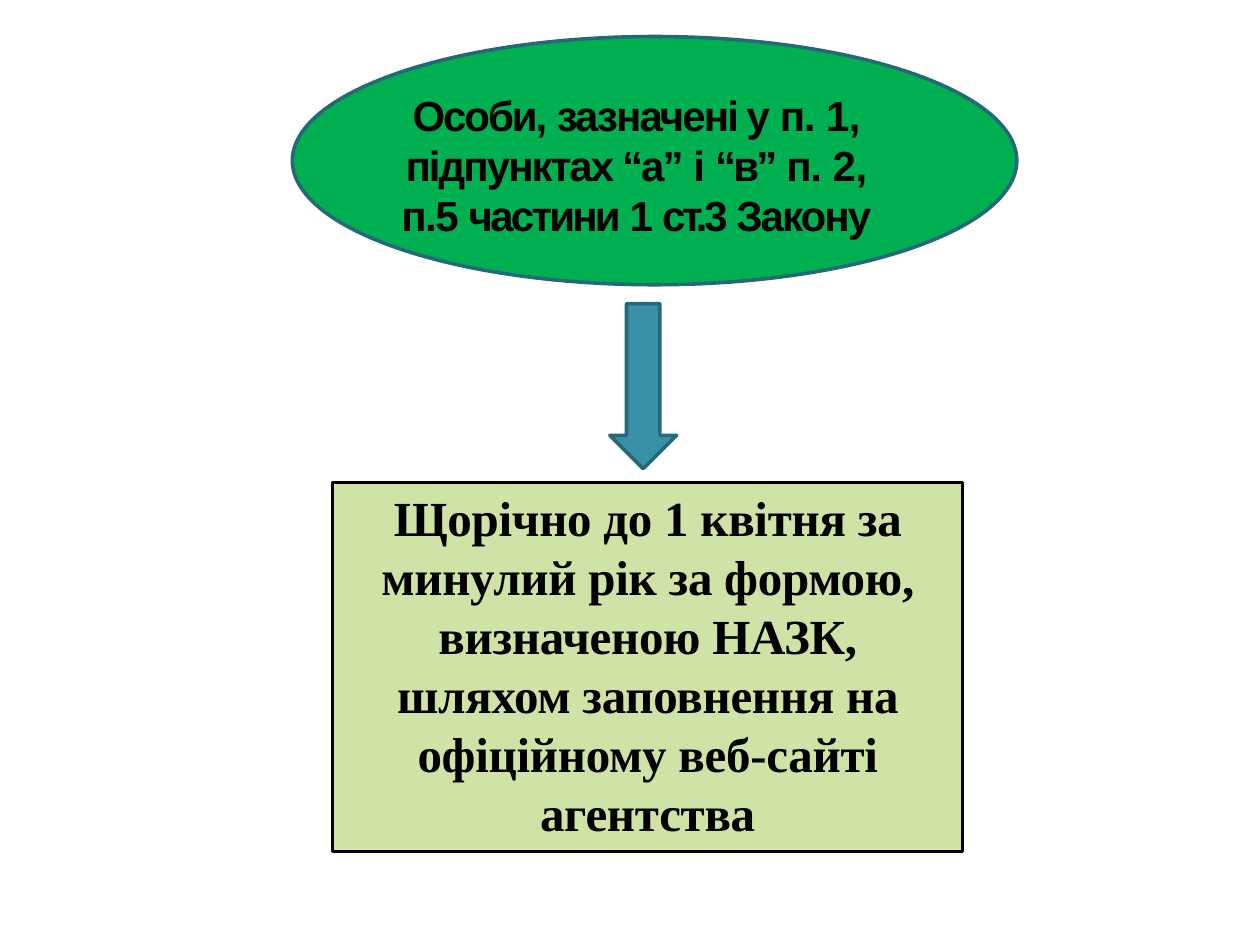
"""Build a slide on who files a yearly declaration and when."""
from typing import NamedTuple

from pptx import Presentation
from pptx import util as u
from pptx.dml.color import RGBColor
from pptx.enum import shapes, text


class Block(NamedTuple):
    kind: shapes.MSO_SHAPE
    left: float
    top: float
    width: float
    height: float
    fill: str
    line: str
    weight: float


class Style(NamedTuple):
    font: str
    size: float
    leading: float
    inset_side: float
    inset_top: float


OVAL = Block(shapes.MSO_SHAPE.OVAL, 2.32, 0.29, 5.75, 1.97, "00AF50", "256979", 2.04)
ARROW = Block(shapes.MSO_SHAPE.DOWN_ARROW, 4.84, 2.41, 0.53, 1.31, "3891A7", "256979", 2.04)
DEADLINE = Block(shapes.MSO_SHAPE.RECTANGLE, 2.64, 3.83, 5, 2.93, "D0E3A6", "000000", 1.56)

TITLE_STYLE = Style("Arial", 24, 28.6, 0, 0.02)
DEADLINE_STYLE = Style("Times New Roman", 28, 33.7, 0.3, 0.04)

TITLE_RUNS = [
    ("Особи, ", -1.2), ("зазначені у ", -1.1), ("п. ", -0.7), ("1, ", -0.3),
    ("підпунктах “а” ", -1.1), ("і ", -0.8), ("“в” ", -1.6), ("п. ", -0.7),
    ("2, ", -0.2), ("п.5 ", -0.9), ("частини ", -1.6), ("1 ", -1.5),
    ("ст.3 ", -1.8), ("Закону", -1.1),
]
DEADLINE_RUNS = [
    ("Щорічно до 1 квітня за минулий рік за формою, визначеною НАЗК, "
     "шляхом заповнення на офіційному веб-сайті агентства", -0.15),
]


def color(value: str) -> RGBColor:
    """Turn a hex string into a colour."""
    return RGBColor.from_string(value)


def draw_block(slide, block: Block):
    """Draw a filled and outlined preset shape."""
    box = map(u.Inches, (block.left, block.top, block.width, block.height))
    shape = slide.shapes.add_shape(block.kind, *box)
    shape.shadow.inherit = False
    shape.fill.solid()
    shape.fill.fore_color.rgb = color(block.fill)
    shape.line.color.rgb = color(block.line)
    shape.line.width = u.Pt(block.weight)
    return shape


def write(shape, runs: list[tuple[str, float]], style: Style) -> None:
    """Fill a shape with one centred bold paragraph of letter-spaced runs."""
    frame = shape.text_frame
    frame.word_wrap = True
    frame.vertical_anchor = text.MSO_ANCHOR.TOP
    frame.margin_left = frame.margin_right = u.Inches(style.inset_side)
    frame.margin_top = u.Inches(style.inset_top)
    frame.margin_bottom = 0
    paragraph = frame.paragraphs[0]
    paragraph.alignment = text.PP_ALIGN.CENTER
    paragraph.line_spacing = u.Pt(style.leading)
    for words, spacing in runs:
        run = paragraph.add_run()
        run.text = words
        run.font.name = style.font
        run.font.size = u.Pt(style.size)
        run.font.bold = True
        run.font.color.rgb = color("000000")
        run.font._element.set("spc", str(round(spacing * 100)))


def main() -> None:
    """Create and save the presentation."""
    presentation = Presentation()
    presentation.slide_width = u.Inches(10)
    presentation.slide_height = u.Inches(7.5)
    slide = presentation.slides.add_slide(presentation.slide_layouts[6])

    draw_block(slide, OVAL)
    title = slide.shapes.add_textbox(*map(u.Inches, (3.05, 0.69, 4, 1.23)))
    write(title, TITLE_RUNS, TITLE_STYLE)
    write(draw_block(slide, DEADLINE), DEADLINE_RUNS, DEADLINE_STYLE)
    draw_block(slide, ARROW)

    presentation.save("out.pptx")


if __name__ == "__main__":
    main()
